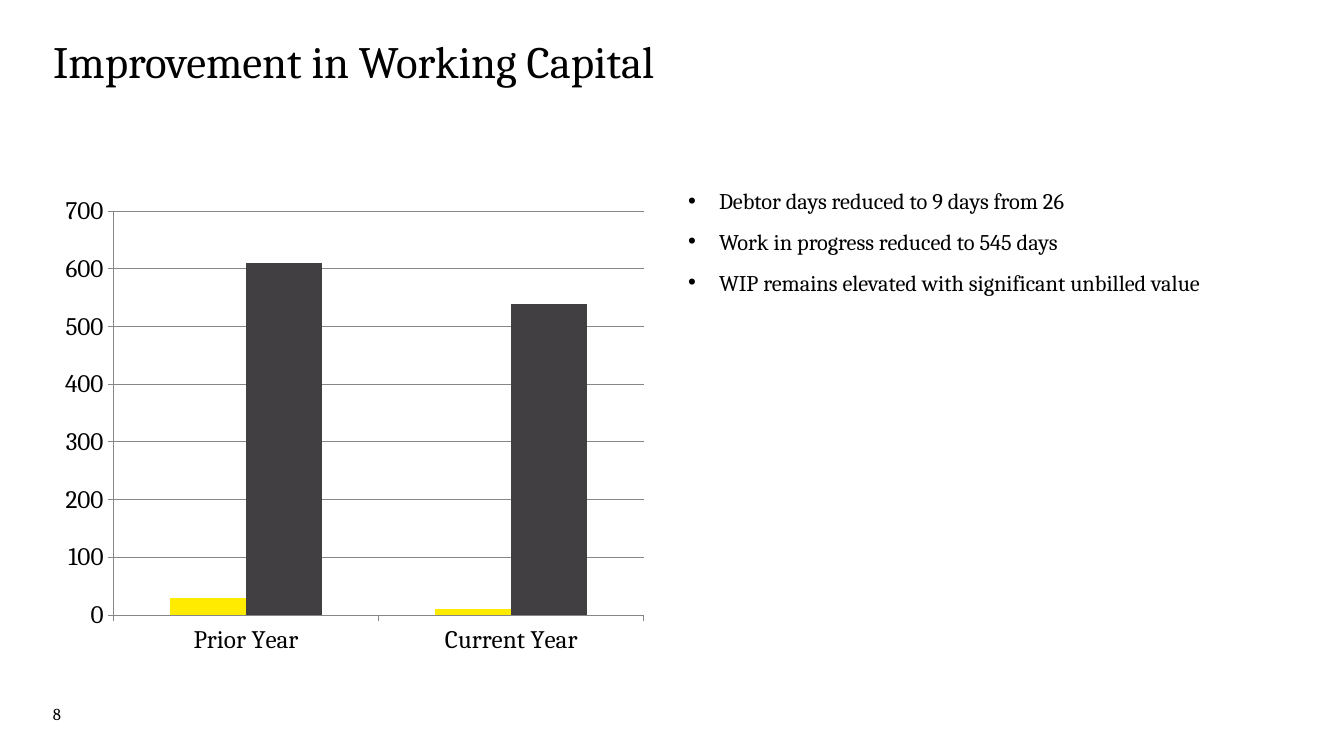
from dataclasses import dataclass

from lxml.etree import SubElement
from pptx import Presentation
from pptx.chart.data import CategoryChartData
from pptx.dml.color import RGBColor
from pptx.enum.chart import XL_CHART_TYPE, XL_TICK_MARK
from pptx.enum.text import MSO_ANCHOR, MSO_AUTO_SIZE, PP_ALIGN
from pptx.oxml.ns import qn
from pptx.util import Emu, Pt

EMU_PER_PX = 914400 / 100.8


@dataclass(frozen=True)
class Theme:
    font: str = "Cambria"
    text: RGBColor = RGBColor(0x00, 0x00, 0x00)
    axis: RGBColor = RGBColor(0x86, 0x86, 0x86)
    debtors: RGBColor = RGBColor(0xFF, 0xEB, 0x00)
    work_in_progress: RGBColor = RGBColor(0x42, 0x3F, 0x43)
    title_size: int = 32
    chart_size: int = 18
    body_size: int = 16
    number_size: int = 12


@dataclass(frozen=True)
class Box:
    left: int
    top: int
    width: int
    height: int

    def emu(self) -> tuple[Emu, Emu, Emu, Emu]:
        return px(self.left), px(self.top), px(self.width), px(self.height)


@dataclass(frozen=True)
class Series:
    name: str
    values: tuple[int, ...]
    color: RGBColor


THEME = Theme()
TITLE_BOX = Box(53, 40, 1238, 118)
CHART_BOX = Box(53, 187, 603, 477)
BODY_BOX = Box(688, 187, 603, 477)
NUMBER_BOX = Box(53, 704, 47, 40)
BULLET_INDENT = 31

YEARS = ("Prior Year", "Current Year")
SERIES = (
    Series("Series 1", (30, 10), THEME.debtors),
    Series("Series 2", (610, 540), THEME.work_in_progress),
)
POINTS = (
    "Debtor days reduced to 9 days from 26",
    "Work in progress reduced to 545 days",
    "WIP remains elevated with significant unbilled value",
)


def px(length: int) -> Emu:
    return Emu(round(length * EMU_PER_PX))


def set_font(font, size: int) -> None:
    font.name = THEME.font
    font.size = Pt(size)
    font.color.rgb = THEME.text


def add_bullet(paragraph) -> None:
    properties = paragraph._p.get_or_add_pPr()
    properties.set("marL", str(px(BULLET_INDENT)))
    properties.set("indent", str(-px(BULLET_INDENT)))
    SubElement(properties, qn("a:buFont")).set("typeface", "Arial")
    SubElement(properties, qn("a:buChar")).set("char", "•")


def write_text(shape, box: Box, *lines: str, size: int, line_spacing: float = 1.0,
               space_before: int = 0, bulleted: bool = False) -> None:
    """Place the shape and fill it with one paragraph per line."""
    shape.left, shape.top, shape.width, shape.height = box.emu()
    frame = shape.text_frame
    frame.word_wrap = True
    frame.auto_size = MSO_AUTO_SIZE.NONE
    frame.vertical_anchor = MSO_ANCHOR.TOP
    frame.margin_left = frame.margin_top = frame.margin_right = frame.margin_bottom = 0
    for index, line in enumerate(lines):
        paragraph = frame.add_paragraph() if index else frame.paragraphs[0]
        if bulleted:
            add_bullet(paragraph)
        paragraph.alignment = PP_ALIGN.LEFT
        paragraph.line_spacing = line_spacing
        paragraph.space_before = Pt(space_before if index else 0)
        run = paragraph.add_run()
        run.text = line
        set_font(run.font, size)


def format_line(line) -> None:
    line.color.rgb = THEME.axis
    line.width = Pt(0.75)


def add_days_chart(slide) -> None:
    data = CategoryChartData()
    data.categories = YEARS
    for series in SERIES:
        data.add_series(series.name, series.values)
    chart = slide.shapes.add_chart(
        XL_CHART_TYPE.COLUMN_CLUSTERED, *CHART_BOX.emu(), data).chart
    chart.has_legend = False
    chart.has_title = False
    set_font(chart.font, THEME.chart_size)

    for axis in (chart.category_axis, chart.value_axis):
        axis.major_tick_mark = XL_TICK_MARK.OUTSIDE
        axis.minor_tick_mark = XL_TICK_MARK.NONE
        format_line(axis.format.line)
    value_axis = chart.value_axis
    value_axis.minimum_scale, value_axis.maximum_scale = 0, 700
    value_axis.major_unit = 100
    value_axis.has_major_gridlines = True
    format_line(value_axis.major_gridlines.format.line)

    plot = chart.plots[0]
    plot.gap_width = 150
    plot.overlap = 0
    plot.vary_by_categories = False
    for bars, series in zip(plot.series, SERIES):
        bars.format.fill.solid()
        bars.format.fill.fore_color.rgb = series.color


def main() -> None:
    presentation = Presentation()
    presentation.slide_width, presentation.slide_height = px(1344), px(756)
    slide = presentation.slides.add_slide(presentation.slide_layouts[1])
    write_text(slide.shapes.title, TITLE_BOX, "Improvement in Working Capital",
               size=THEME.title_size, line_spacing=0.9)
    write_text(slide.placeholders[1], BODY_BOX, *POINTS,
               size=THEME.body_size, space_before=10, bulleted=True)
    add_days_chart(slide)
    write_text(slide.shapes.add_textbox(*NUMBER_BOX.emu()), NUMBER_BOX, "8",
               size=THEME.number_size)
    presentation.save("out.pptx")


if __name__ == "__main__":
    main()
